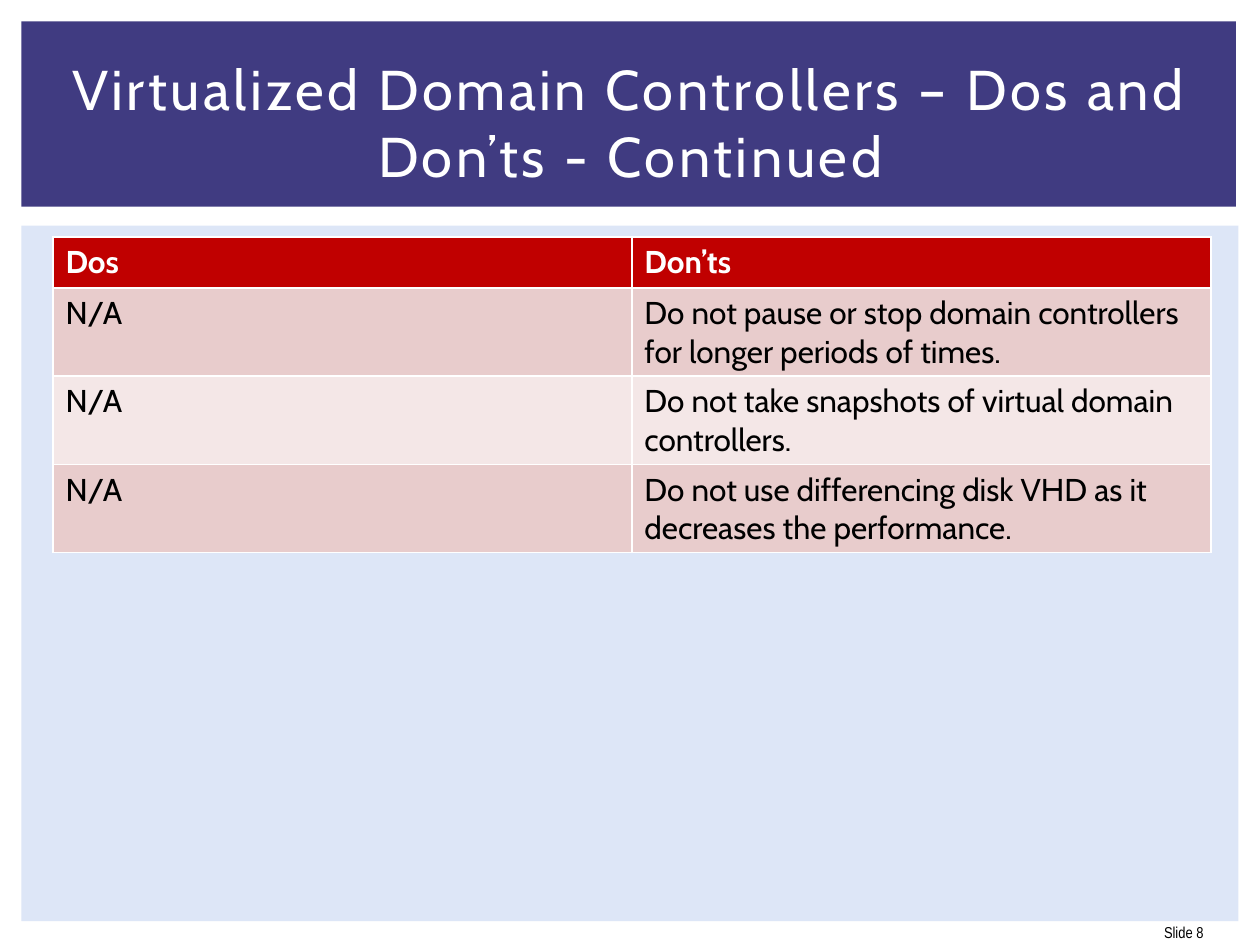
import pptx
import pptx.dml.color
import pptx.enum.shapes
import pptx.enum.text
import pptx.util

ALIGN = pptx.enum.text.PP_ALIGN
COLS, ROWS = 100, 75
TITLE = "Virtualized Domain Controllers – Dos and Don’ts - Continued"
RULES = [
    ("Dos", "Don’ts"),
    ("N/A", "Do not pause or stop domain controllers for longer periods of times."),
    ("N/A", "Do not take snapshots of virtual domain controllers."),
    ("N/A", "Do not use differencing disk VHD as it decreases the performance."),
]


def rgb(color):
    """Turn a hex string into a colour."""
    return pptx.dml.color.RGBColor.from_string(color)


class Deck:
    """Hold the style and the current slide, placed on a grid of 100 by 75."""

    font = "Cabin"
    band, panel, header = "403B81", "DDE6F7", "C00000"
    stripes = "F4E7E7", "E8CCCC"
    light, dark = "FFFFFF", "000000"

    def __init__(self, prs):
        """Add a blank slide and measure its grid."""
        self.cell = prs.slide_width / COLS, prs.slide_height / ROWS
        self.s = prs.slides.add_slide(prs.slide_layouts[6])

    def box(self, *at):
        """Convert left, top, width and height from grid units."""
        return [round(n * self.cell[i % 2]) for i, n in enumerate(at)]

    def paragraph(self, tf, text, color, align=ALIGN.LEFT, spacing=0, **formats):
        """Put one formatted paragraph into a text frame."""
        p = tf.paragraphs[0]
        p.alignment = align
        r = p.add_run()
        r.text = text
        for name, value in ({"name": self.font} | formats).items():
            setattr(r.font, name, value)
        r.font.color.rgb = rgb(color)
        if spacing:
            r._r.get_or_add_rPr().set("spc", str(spacing * 100))

    def rect(self, at, color):
        """Draw a plain filled rectangle."""
        sp = self.s.shapes.add_shape(pptx.enum.shapes.MSO_SHAPE.RECTANGLE, *self.box(*at))
        sp.shadow.inherit = False
        sp.fill.solid()
        sp.fill.fore_color.rgb = rgb(color)
        sp.line.fill.background()

    def text(self, at, text, color, **formats):
        """Add a wrapped, vertically centred text box."""
        tf = self.s.shapes.add_textbox(*self.box(*at)).text_frame
        tf.word_wrap = True
        tf.vertical_anchor = pptx.enum.text.MSO_ANCHOR.MIDDLE
        self.paragraph(tf, text, color, **formats)

    def table(self, at, rows, size):
        """Add a table with a header row and striped body rows."""
        table = self.s.shapes.add_table(len(rows), len(rows[0]), *self.box(*at)).table
        for i, row in enumerate(rows):
            head = i == 0
            for j, text in enumerate(row):
                cell = table.cell(i, j)
                cell.fill.solid()
                cell.fill.fore_color.rgb = rgb(self.header if head else self.stripes[i % 2])
                self.paragraph(cell.text_frame, text, self.light if head else self.dark,
                               size=size, bold=head)


def main():
    """Build and save the slide."""
    prs = pptx.Presentation()
    prs.slide_width, prs.slide_height = pptx.util.Inches(10), pptx.util.Inches(7.5)
    deck = Deck(prs)
    deck.rect((1.7, 17.9, 96.6, 55.2), deck.panel)
    deck.rect((1.7, 1.7, 96.4, 14.7), deck.band)
    deck.text((90.1, 72.5, 6.4, 3), "Slide 8", deck.dark, align=ALIGN.RIGHT,
              name="Arial Narrow", size=pptx.util.Pt(9))
    deck.table((4.2, 18.8, 91.9, 16.2), RULES, pptx.util.Pt(18))
    deck.text((4.2, 3.9, 91.7, 11.5), TITLE, deck.light, align=ALIGN.CENTER,
              spacing=2, size=pptx.util.Pt(32))
    prs.save("out.pptx")


if __name__ == "__main__":
    main()
